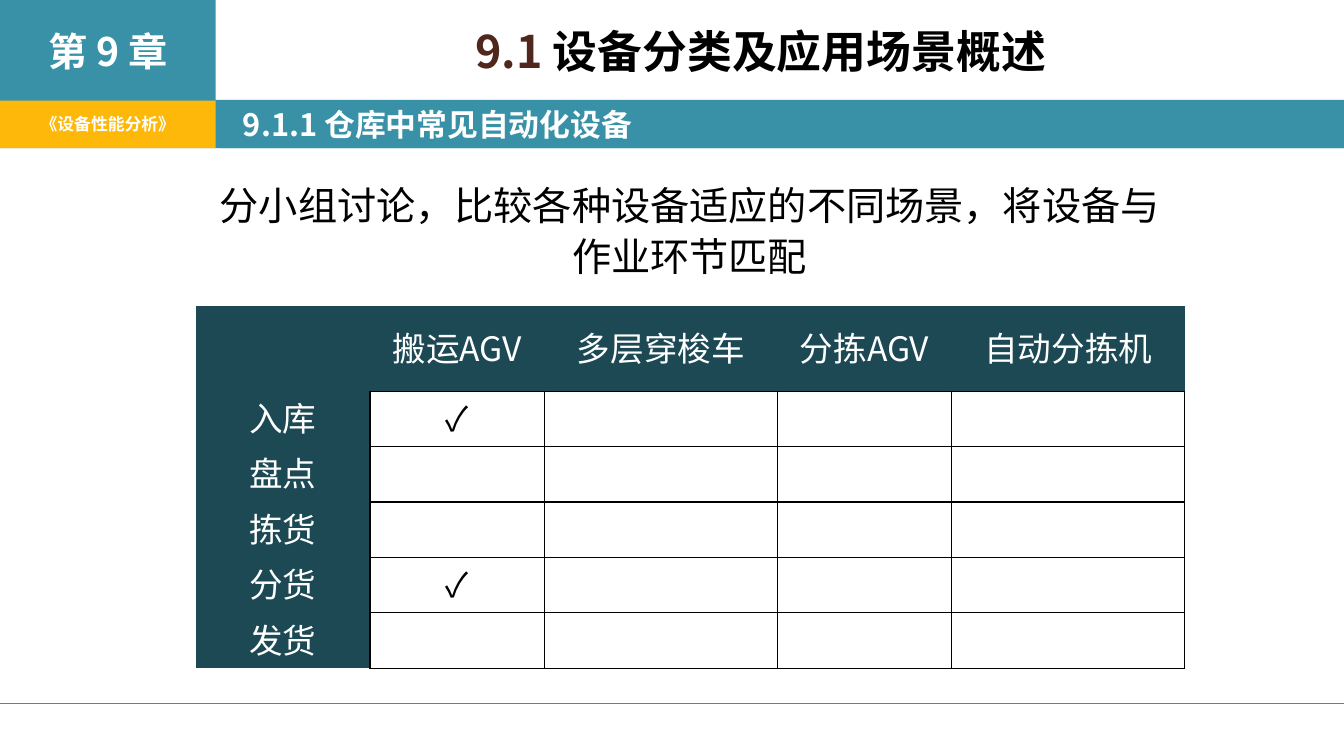
"""Build the slide that matches warehouse equipment with work stages."""
from dataclasses import dataclass

from lxml import etree
from pptx import Presentation
from pptx import util as u
from pptx.dml.color import RGBColor
from pptx.enum import shapes, text
from pptx.oxml import ns


@dataclass(frozen=True)
class Theme:
    """Colours, fonts and type sizes of the slide."""

    teal: str = "3891A7"
    amber: str = "FEB80A"
    dark: str = "1C4954"
    brown: str = "4F271C"
    black: str = "000000"
    white: str = "FFFFFF"
    cjk: str = "Noto Sans CJK SC"
    latin: str = "Calibri"
    title: int = 32
    chapter: int = 28
    task: int = 28
    grid: int = 24
    section: int = 22
    course: int = 12
    rule: float = 0.79
    border: int = 1


THEME = Theme()
EQUIPMENT = ["搬运AGV", "多层穿梭车", "分拣AGV", "自动分拣机"]
STAGES = ["入库", "盘点", "拣货", "分货", "发货"]
MATCHES = {("入库", "搬运AGV"), ("分货", "搬运AGV")}
COLUMN_WIDTHS = [1.73, 1.73, 2.31, 1.73, 2.31]
HEADER_HEIGHT, STAGE_HEIGHT = 0.84, 0.55


def box(left, top, width, height):
    """Return a position and size in inches."""
    return [u.Inches(value) for value in (left, top, width, height)]


def style_run(run, size, color, bold=False, font=THEME.cjk):
    """Format one run, with the Chinese font for its Chinese glyphs."""
    run.font.size = u.Pt(size)
    run.font.bold = bold
    run.font.name = font
    run.font.color.rgb = RGBColor.from_string(color)
    east_asian = etree.SubElement(run.font._element, ns.qn("a:ea"))
    east_asian.set("typeface", THEME.cjk)


def write(frame, words, size, color, bold=False, font=THEME.cjk,
          align=text.PP_ALIGN.CENTER):
    """Put one formatted paragraph into a text frame."""
    frame.text = words
    frame.word_wrap = True
    paragraph = frame.paragraphs[0]
    paragraph.alignment = align
    style_run(paragraph.runs[0], size, color, bold, font)
    return paragraph


def add_panel(slide, place, color, words="", size=THEME.course,
              align=text.PP_ALIGN.CENTER):
    """Add a plain filled rectangle, with bold white text if given."""
    panel = slide.shapes.add_shape(shapes.MSO_SHAPE.RECTANGLE, *box(*place))
    panel.shadow.inherit = False
    panel.fill.solid()
    panel.fill.fore_color.rgb = RGBColor.from_string(color)
    panel.line.fill.background()
    panel.text_frame.vertical_anchor = text.MSO_ANCHOR.MIDDLE
    if words:
        write(panel.text_frame, words, size, THEME.white, True, align=align)
    return panel


def add_footer_rule(slide):
    """Add the thin line above the foot of the slide."""
    rule = slide.shapes.add_connector(
        shapes.MSO_CONNECTOR.STRAIGHT,
        u.Inches(0), u.Inches(6.98), u.Inches(13.33), u.Inches(6.98))
    rule.line.color.rgb = RGBColor.from_string(THEME.teal)
    rule.line.width = u.Pt(THEME.rule)
    etree.SubElement(rule._element.spPr, ns.qn("a:effectLst"))


def add_title(slide):
    """Add the two-coloured title."""
    title = slide.shapes.add_textbox(*box(2.31, 0.19, 10.47, 0.8))
    paragraph = write(title.text_frame, "9.1 ", THEME.title, THEME.brown, True)
    topic = paragraph.add_run()
    topic.text = "设备分类及应用场景概述"
    style_run(topic, THEME.title, THEME.black, True)


def add_task(slide):
    """Add the discussion task above the table."""
    task = slide.shapes.add_textbox(*box(1.94, 1.7, 9.8, 1.14))
    paragraph = write(
        task.text_frame, "分小组讨论，比较各种设备适应的不同场景，将设备与作业环节匹配",
        THEME.task, THEME.black, font=THEME.latin)
    paragraph.line_spacing = 1.1


def set_borders(cell, sides):
    """Draw black lines on the named sides and clear the others."""
    properties = cell._tc.get_or_add_tcPr()
    for side in "LRTB":
        line = etree.SubElement(properties, ns.qn(f"a:ln{side}"))
        line.set("w", str(u.Pt(THEME.border)))
        if side in sides:
            fill = etree.SubElement(line, ns.qn("a:solidFill"))
            etree.SubElement(fill, ns.qn("a:srgbClr")).set("val", THEME.black)
        else:
            etree.SubElement(line, ns.qn("a:noFill"))


def format_cell(cell, words, fill, color, sides):
    """Set a cell's borders, fill, margins and centred text."""
    set_borders(cell, sides)
    cell.fill.solid()
    cell.fill.fore_color.rgb = RGBColor.from_string(fill)
    cell.vertical_anchor = text.MSO_ANCHOR.MIDDLE
    cell.margin_left = cell.margin_right = cell.margin_top = u.Inches(0.01)
    cell.margin_bottom = u.Inches(0.05)
    if words:
        write(cell.text_frame, words, THEME.grid, color)


def add_match_table(slide):
    """Add the table of work stages against equipment."""
    grid = slide.shapes.add_table(
        len(STAGES) + 1, len(EQUIPMENT) + 1, *box(1.94, 3.04, 9.8, 3.6)).table
    for column, width in zip(grid.columns, COLUMN_WIDTHS):
        column.width = u.Inches(width)
    for index, row in enumerate(grid.rows):
        row.height = u.Inches(STAGE_HEIGHT if index else HEADER_HEIGHT)

    format_cell(grid.cell(0, 0), "", THEME.dark, THEME.white, "")
    for column, device in enumerate(EQUIPMENT, 1):
        format_cell(grid.cell(0, column), device, THEME.dark, THEME.white, "B")
    for row, stage in enumerate(STAGES, 1):
        format_cell(grid.cell(row, 0), stage, THEME.dark, THEME.white, "R")
        for column, device in enumerate(EQUIPMENT, 1):
            mark = "✓" if (stage, device) in MATCHES else ""
            format_cell(grid.cell(row, column), mark, THEME.white,
                        THEME.black, "LRTB")


def main():
    """Build and save the slide."""
    deck = Presentation()
    deck.slide_width, deck.slide_height = u.Inches(13.33), u.Inches(7.5)
    slide = deck.slides.add_slide(deck.slide_layouts[6])

    add_panel(slide, (0, 0.99, 13.33, 0.48), THEME.teal)
    add_panel(slide, (0, 0.99, 2.14, 0.48), THEME.amber, "《设备性能分析》")
    add_panel(slide, (0, 0, 2.14, 1), THEME.teal, "第 9 章", THEME.chapter)
    add_footer_rule(slide)
    add_title(slide)
    add_match_table(slide)
    add_task(slide)
    section = add_panel(slide, (2.18, 1, 11.15, 0.47), THEME.teal,
                        "9.1.1 仓库中常见自动化设备", THEME.section,
                        text.PP_ALIGN.JUSTIFY)
    section.text_frame.margin_left = u.Inches(0.23)
    deck.save("out.pptx")


if __name__ == "__main__":
    main()
